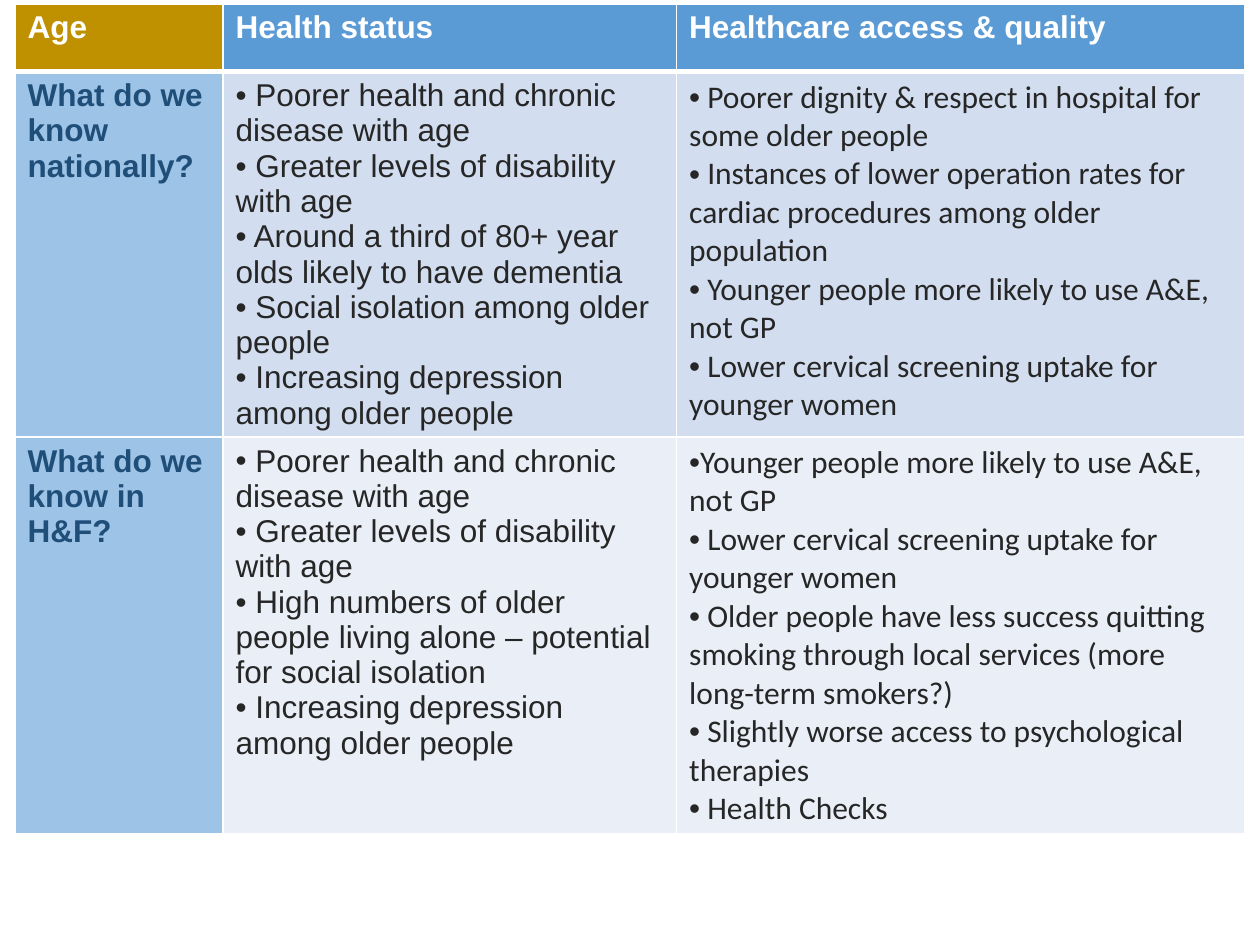
from lxml import etree
from pptx import Presentation
from pptx.dml.color import RGBColor
from pptx.oxml.ns import qn
from pptx.util import Inches, Pt

WHITE, GOLD, BLUE, LIGHT_BLUE = "FFFFFF", "BF9000", "5B9BD5", "9DC3E6"
NAVY, DARK = "1F4E79", "262626"


def rgb(color):
    return RGBColor.from_string(color)


def add_border(cell, side, width):
    ln = etree.SubElement(cell._tc.get_or_add_tcPr(), qn("a:" + side), w=str(Pt(width)))
    fill = etree.SubElement(ln, qn("a:solidFill"))
    etree.SubElement(fill, qn("a:srgbClr"), val=WHITE)


headers = ["Age", "Health status", "Healthcare access & quality"]
questions = ["What do we know nationally?", "What do we know in H&F?"]
health_status = [
    [" Poorer health and chronic disease with age",
     " Greater levels of disability with age",
     " Around a third of 80+ year olds likely to have dementia",
     " Social isolation among older people",
     " Increasing depression among older people"],
    [" Poorer health and chronic disease with age",
     " Greater levels of disability with age",
     " High numbers of older people living alone – potential for social isolation",
     " Increasing depression among older people"],
]
access_quality = [
    [" Poorer dignity & respect in hospital for some older people",
     " Instances of lower operation rates for cardiac procedures among older population",
     " Younger people more likely to use A&E, not GP",
     " Lower cervical screening uptake for younger women"],
    ["Younger people more likely to use A&E, not GP",
     " Lower cervical screening uptake for younger women",
     " Older people have less success quitting smoking through local services "
     "(more long-term smokers?)",
     " Slightly worse access to psychological therapies",
     " Health Checks"],
]
rows = [[[h] for h in headers]]
rows += [[[q], h, a] for q, h, a in zip(questions, health_status, access_quality)]
fills = [[GOLD, BLUE, BLUE],
         [LIGHT_BLUE, "D2DEEF", "D2DEEF"],
         [LIGHT_BLUE, "EAEFF7", "EAEFF7"]]
col_widths = [1.65, 3.6, 4.51]
row_heights = [0.54, 2.43, 2.55]

prs = Presentation()
prs.slide_width, prs.slide_height = Inches(10), Inches(7.5)
s = prs.slides.add_slide(prs.slide_layouts[6])

# Table grid
table = s.shapes.add_table(3, 3, Inches(0.12), Inches(0.03),
                           Inches(sum(col_widths)), Inches(sum(row_heights))).table
for col, width in zip(table.columns, col_widths):
    col.width = Inches(width)
for row, height in zip(table.rows, row_heights):
    row.height = Inches(height)

# Cells
for i, row in enumerate(rows):
    for j, lines in enumerate(row):
        cell = table.cell(i, j)
        is_header = i == 0
        is_body = i > 0 and j > 0

        # Borders come before the fill in the cell properties
        for side in ("lnL", "lnR", "lnT", "lnB"):
            thick = (is_header and side == "lnB") or (i == 1 and side == "lnT")
            add_border(cell, side, 3 if thick else 1)
        cell.fill.solid()
        cell.fill.fore_color.rgb = rgb(fills[i][j])

        # Text, bulleted in the body cells
        tf = cell.text_frame
        for n, line in enumerate(lines):
            p = tf.paragraphs[0] if n == 0 else tf.add_paragraph()
            if is_body:
                pPr = p._p.get_or_add_pPr()
                pPr.set("marL", "0")
                pPr.set("indent", "0")
                etree.SubElement(pPr, qn("a:buFont"), typeface="Arial")
                etree.SubElement(pPr, qn("a:buChar"), char="•")
            r = p.add_run()
            r.text = line
            r.font.size = Pt(18)
            r.font.name = "Calibri" if is_body and j == 2 else "Arial"
            r.font.bold = not is_body
            r.font.color.rgb = rgb(WHITE if is_header else DARK if is_body else NAVY)

prs.save("out.pptx")
